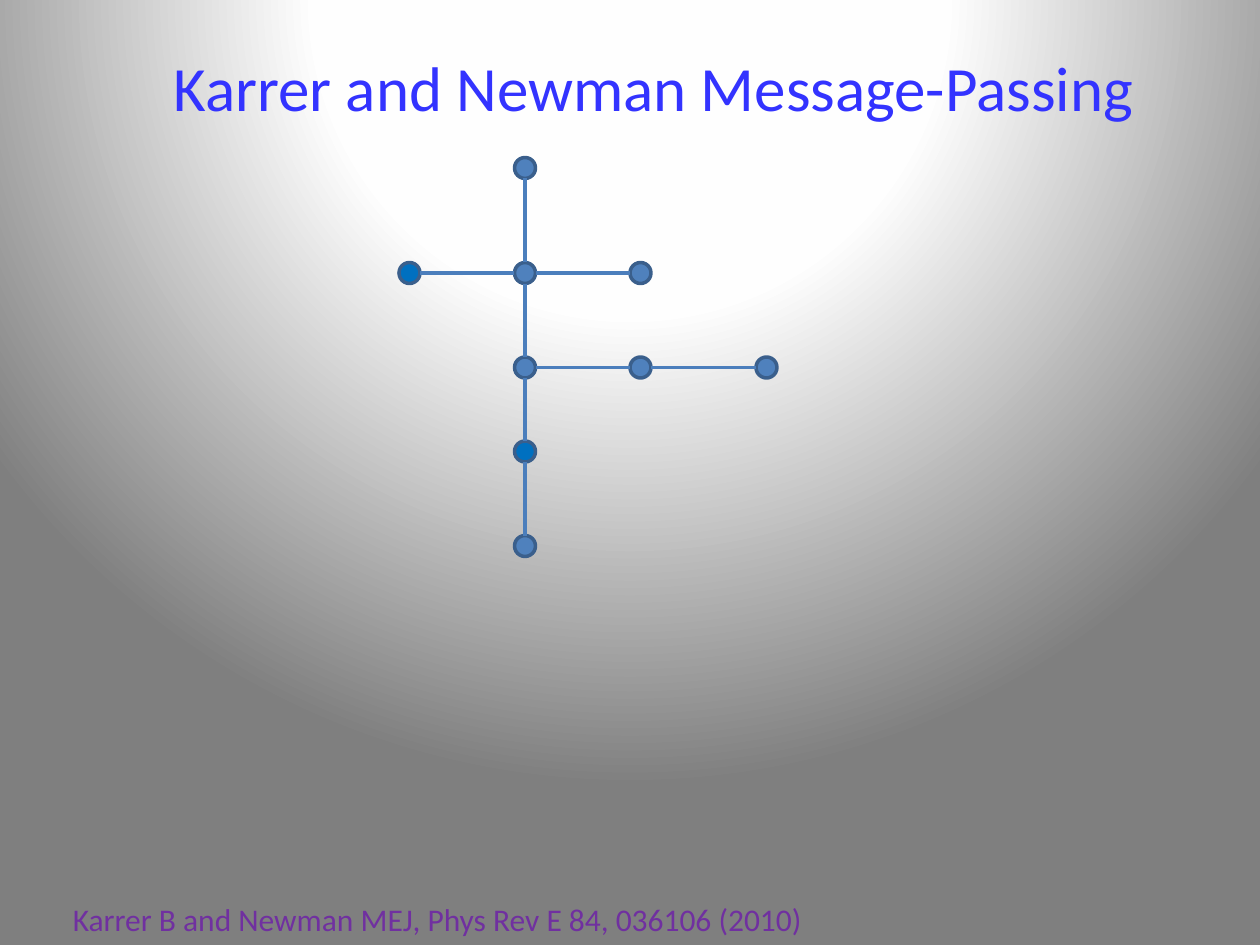
from pptx import Presentation
from pptx.dml.color import RGBColor
from pptx.enum.shapes import MSO_CONNECTOR as Connector, MSO_SHAPE as Shape
from pptx.enum.text import MSO_ANCHOR as Anchor, MSO_AUTO_SIZE as AutoSize, PP_ALIGN as Align
from pptx.oxml import parse_xml
from pptx.oxml.ns import nsdecls, qn
from pptx.util import Pt

COLORS = {
    "title": "3333FF", "citation": "7030A0",
    "node": "4F81BD", "marked": "0070C0", "rim": "3A5F8C", "edge": "4B7EBC",
    "glow": "FFFFFF", "halo": "FEFEFE", "dusk": "7F7F7F",
}
FONT = "Calibri"
DIAMETER = 12
LINE_WIDTH = 2

# Node centres, relative to the tree's box
NODES = {
    "top": (72, 6),
    "left": (6, 66), "hub": (72, 66), "right": (138, 66),
    "branch": (72, 120), "near": (138, 120), "far": (210, 120),
    "lower": (72, 168), "bottom": (72, 222),
}
MARKED = {"left", "lower"}
EDGES = [
    ("top", "hub"), ("left", "hub"), ("hub", "right"), ("hub", "branch"),
    ("branch", "near"), ("near", "far"), ("branch", "lower"), ("lower", "bottom"),
]


def color(name):
    return RGBColor.from_string(COLORS[name])


def paint_background(slide):
    slide.background.fill.gradient()
    linear = next(slide.element.iter(qn("a:gradFill")))
    stops = "".join(
        f'<a:gs pos="{position * 1000}"><a:srgbClr val="{COLORS[name]}"/></a:gs>'
        for position, name in ((0, "glow"), (40, "halo"), (100, "dusk")))
    radial = parse_xml(
        f'<a:gradFill rotWithShape="1" {nsdecls("a")}><a:gsLst>{stops}</a:gsLst>'
        '<a:path path="circle"><a:fillToRect l="50000" t="-80000" r="50000" b="180000"/>'
        '</a:path></a:gradFill>')
    linear.getparent().replace(linear, radial)


def place_text(holder, box, text, size, color_name):
    holder.left, holder.top, holder.width, holder.height = map(Pt, box)
    frame = holder.text_frame
    frame.text = text
    frame.word_wrap = False
    frame.auto_size = AutoSize.NONE
    frame.vertical_anchor = Anchor.TOP
    line = frame.paragraphs[0]
    line.alignment = Align.LEFT
    font = line.runs[0].font
    font.name, font.size = FONT, Pt(size)
    font.color.rgb = color(color_name)


def add_edge(slide, start, end):
    """Join two node centres, stopping at the rims; start is left of or above end."""
    radius = DIAMETER / 2
    dx = radius if end[0] > start[0] else 0
    dy = radius if end[1] > start[1] else 0
    edge = slide.shapes.add_connector(
        Connector.STRAIGHT, Pt(start[0] + dx), Pt(start[1] + dy),
        Pt(end[0] - dx), Pt(end[1] - dy))
    edge.line.color.rgb = color("edge")
    edge.line.width = Pt(LINE_WIDTH)
    edge.element.spPr.append(parse_xml(f'<a:effectLst {nsdecls("a")}/>'))


def add_node(slide, center, fill_name):
    x, y = (Pt(value - DIAMETER / 2) for value in center)
    node = slide.shapes.add_shape(Shape.OVAL, x, y, Pt(DIAMETER), Pt(DIAMETER))
    node.shadow.inherit = False
    node.fill.solid()
    node.fill.fore_color.rgb = color(fill_name)
    node.line.color.rgb = color("rim")
    node.line.width = Pt(LINE_WIDTH)


def draw_tree(slide, left, top):
    centers = {name: (left + x, top + y) for name, (x, y) in NODES.items()}
    for name, center in centers.items():
        add_node(slide, center, "marked" if name in MARKED else "node")
    for start, end in EDGES:
        add_edge(slide, centers[start], centers[end])


def main():
    deck = Presentation()
    deck.slide_width, deck.slide_height = Pt(720), Pt(540)
    slide = deck.slides.add_slide(deck.slide_layouts[5])
    paint_background(slide)

    # Title
    place_text(slide.shapes.title, (92, 24, 568, 51),
               "Karrer and Newman Message-Passing", 36, "title")

    # Message-passing tree
    draw_tree(slide, 228, 90)

    # Citation
    citation = slide.shapes.add_textbox(0, 0, 0, 0)
    place_text(citation, (34.5, 511, 439, 29),
               "Karrer B and Newman MEJ, Phys Rev E 84, 036106 (2010)", 18, "citation")

    deck.save("out.pptx")


if __name__ == "__main__":
    main()
